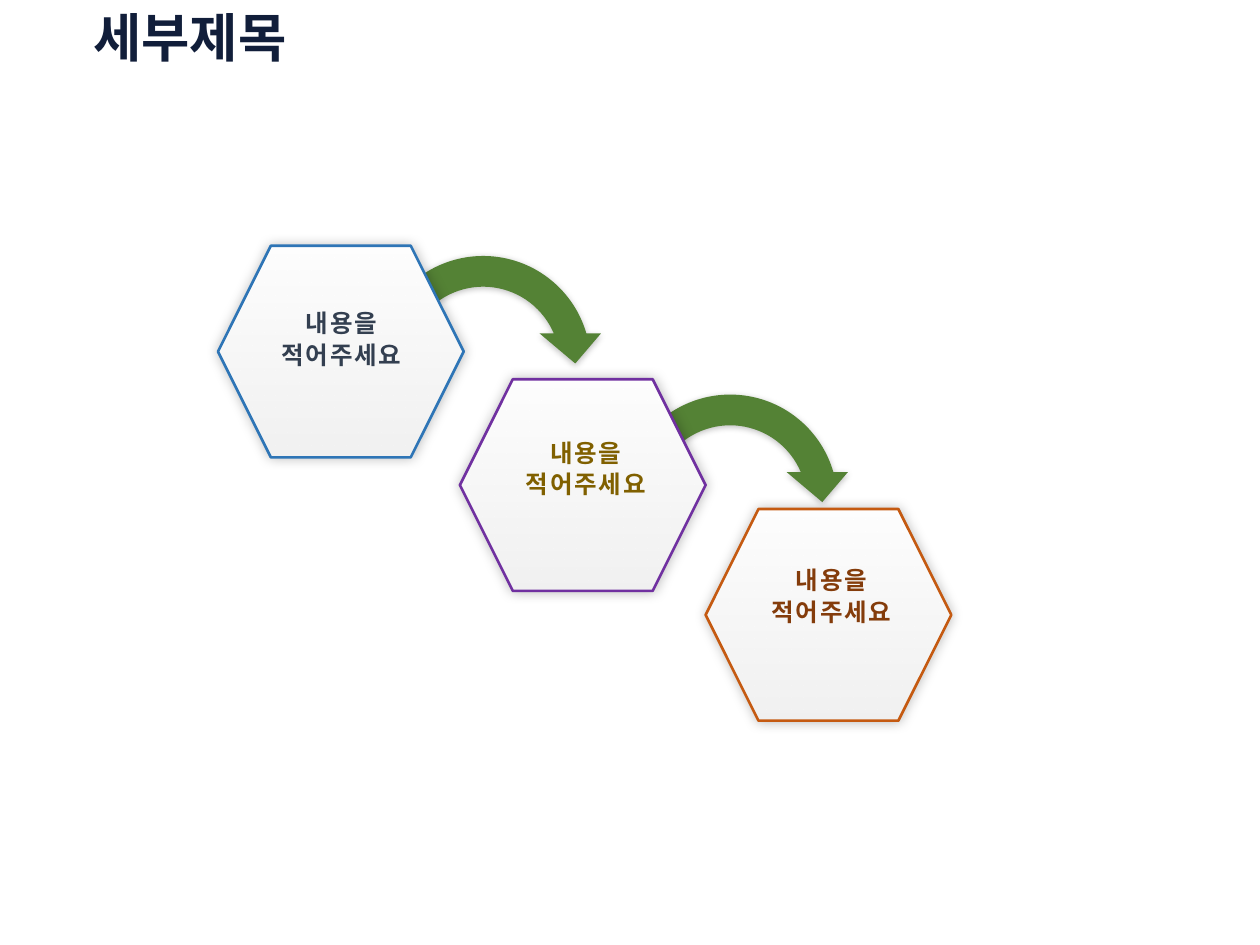
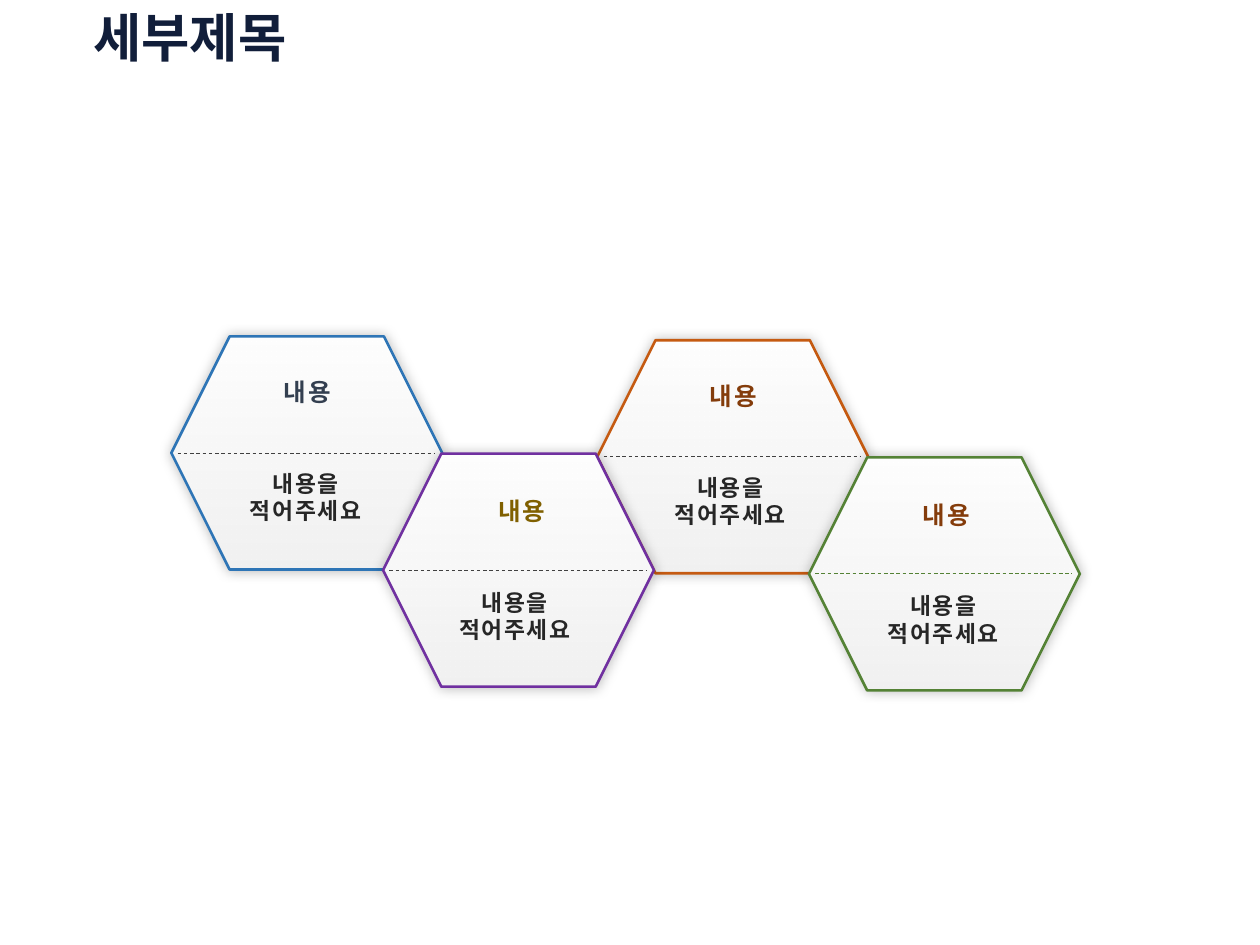
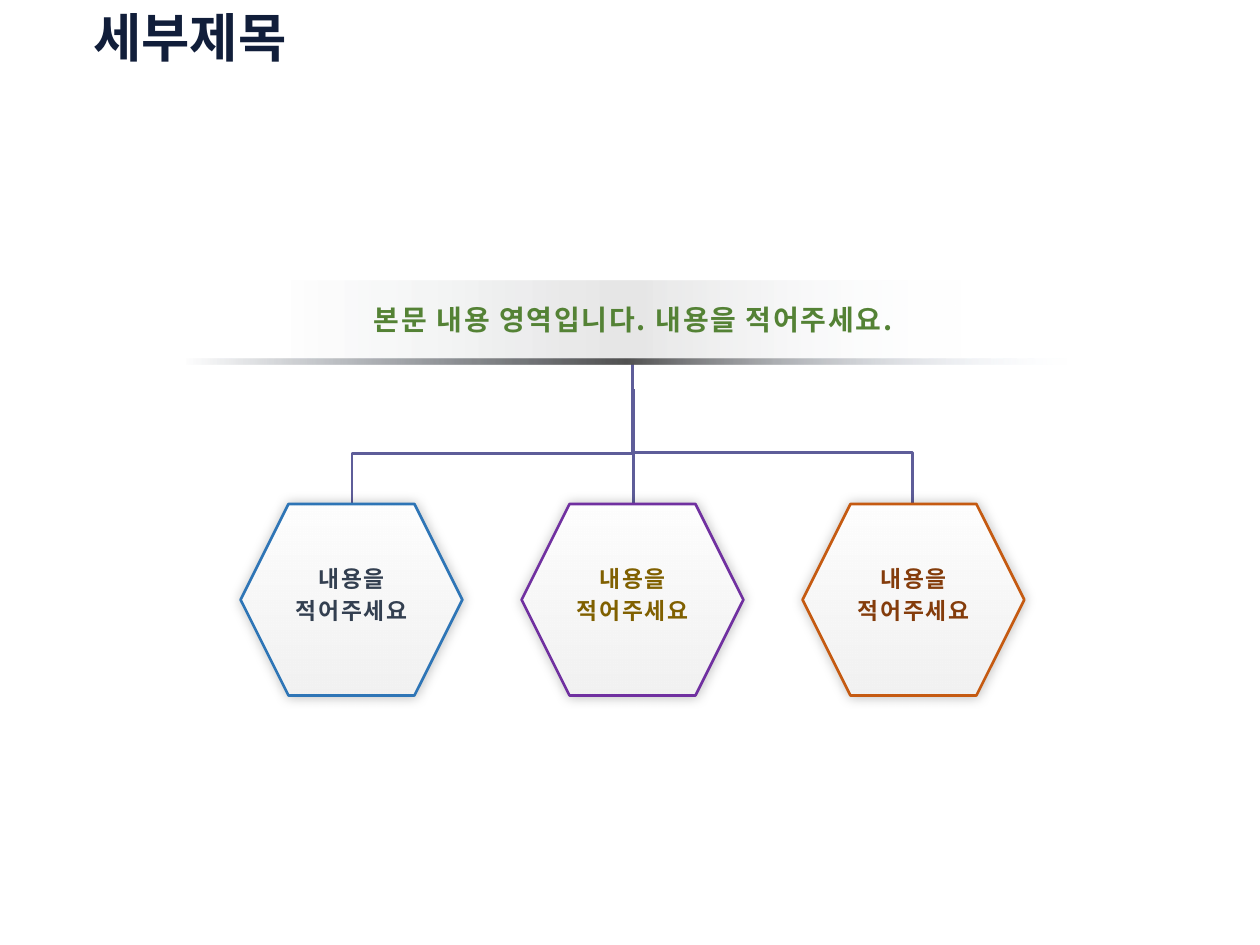
import dataclasses
import typing

import lxml.etree
import pptx
import pptx.dml.color
import pptx.enum.dml
import pptx.enum.shapes
import pptx.enum.text
import pptx.oxml.ns
import pptx.util

WIDE = pptx.util.Inches(10)
HIGH = pptx.util.Inches(7.5)
COL = WIDE / 100
ROW = HIGH / 75

KIND = pptx.enum.shapes.MSO_SHAPE
LINK = pptx.enum.shapes.MSO_CONNECTOR
ALIGN = pptx.enum.text.PP_ALIGN
FONT = "Noto Sans CJK KR"
NAVY, BLUE, GOLD, RUST = "111E3A", "333F50", "806000", "843C0B"
SKY, PLUM, CLAY, LEAF = "2E75B6", "7030A0", "C55A11", "548235"
INK, GREY, STEM = "262626", "404040", "5E5D99"
HEAD = "세부제목"
WORD = ["내용"]
LINES = ["내용을", "적어주세요"]
LEAD = ["본문 내용 영역입니다. 내용을 적어주세요."]


class Box(typing.NamedTuple):
    x: float
    y: float
    w: float
    h: float


class Stop(typing.NamedTuple):
    pos: int
    hue: str
    alpha: int = 100


class Shade(typing.NamedTuple):
    alpha: int
    blur: int
    gap: int
    turn: int


@dataclasses.dataclass
class Cell:
    x: float
    y: float
    edge: str
    hue: str
    tx: float
    ty: float
    bx: float = 0
    by: float = 0
    dash: str = GREY


PEARL = [Stop(0, "FFFFFF"), Stop(100, "F2F2F2"), Stop(100, "E1EBFB", 0)]
GLOW = Shade(25, 7, 0, 0)
DROP = Shade(25, 4, 1, 90)

STEPS = [
    Cell(17.3, 19.5, SKY, BLUE, 18.5, 23.8),
    Cell(36.5, 30.1, PLUM, GOLD, 37.9, 34.1),
    Cell(56, 40.4, CLAY, RUST, 57.4, 44.2),
]
CHAIN = [
    Cell(47.4, 27, CLAY, RUST, 49.6, 29.6, 50.2, 37.1),
    Cell(13.6, 26.7, SKY, BLUE, 15.8, 29.3, 16.5, 36.8),
    Cell(30.4, 36, PLUM, GOLD, 32.8, 38.7, 33.1, 46.2),
    Cell(64.2, 36.3, LEAF, RUST, 66.5, 39, 67.1, 46.5, LEAF),
]
TREE = [
    Cell(19.1 + 22.3 * i, 40, edge, hue, 19.3 + 22.3 * i, 44)
    for i, (edge, hue) in enumerate([(SKY, BLUE), (PLUM, GOLD), (CLAY, RUST)])
]


def tint(code: str) -> pptx.dml.color.RGBColor:
    return pptx.dml.color.RGBColor.from_string(code)


def put(item: typing.Any, **form: typing.Any) -> None:
    for key, value in form.items():
        setattr(item, key, value)


def add(base: typing.Any, tag: str, **form: typing.Any) -> typing.Any:
    node = lxml.etree.SubElement(base, pptx.oxml.ns.qn(tag))
    for key, value in form.items():
        node.set(key, str(value))
    return node


def place(box: Box) -> list[int]:
    return [round(n * unit) for n, unit in zip(box, (COL, ROW, COL, ROW))]


def blend(shape: typing.Any, stops: list[Stop], turn: int) -> None:
    shape.fill.gradient()
    fill = shape._element.spPr.find(pptx.oxml.ns.qn("a:gradFill"))
    fill.find(pptx.oxml.ns.qn("a:lin")).set("ang", str(turn * 60000))
    bag = fill.find(pptx.oxml.ns.qn("a:gsLst"))
    for old in list(bag):
        bag.remove(old)
    for stop in stops:
        node = add(add(bag, "a:gs", pos=stop.pos * 1000), "a:srgbClr", val=stop.hue)
        if stop.alpha < 100:
            add(node, "a:alpha", val=stop.alpha * 1000)


def cast(shape: typing.Any, shade: Shade) -> None:
    base = shape._element.spPr.find(pptx.oxml.ns.qn("a:effectLst"))
    node = add(base, "a:outerShdw", blurRad=shade.blur * 12700, dist=shade.gap * 12700,
               dir=shade.turn * 60000, algn="ctr", rotWithShape=0)
    add(add(node, "a:srgbClr", val="000000"), "a:alpha", val=shade.alpha * 1000)


def form(shapes: typing.Any, kind: typing.Any, box: Box) -> typing.Any:
    shape = shapes.add_shape(kind, *place(box))
    shape.shadow.inherit = False
    shape.line.fill.background()
    return shape


def hexa(shapes: typing.Any, box: Box, edge: str) -> None:
    shape = form(shapes, KIND.HEXAGON, box)
    blend(shape, PEARL, 90)
    shape.line.color.rgb = tint(edge)
    shape.line.width = pptx.util.Pt(1.5)
    cast(shape, GLOW)


def arc(shapes: typing.Any, box: Box) -> None:
    shape = form(shapes, KIND.CIRCULAR_ARROW, box)
    shape.fill.solid()
    shape.fill.fore_color.rgb = tint(LEAF)
    cast(shape, DROP)


def band(shapes: typing.Any, box: Box, stops: list[Stop]) -> None:
    blend(form(shapes, KIND.RECTANGLE, box), stops, 0)


def link(shapes: typing.Any, kind: typing.Any, ends: Box, hue: str, size: float) -> typing.Any:
    wire = shapes.add_connector(kind, *place(ends))
    wire.line.color.rgb = tint(hue)
    wire.line.width = pptx.util.Pt(size)
    add(wire._element.spPr, "a:effectLst")
    return wire


def bend(shapes: typing.Any, ends: Box, turn: int, share: float) -> None:
    wire = link(shapes, LINK.ELBOW, ends, STEM, 1.5)
    prop = wire._element.spPr
    prop.find(pptx.oxml.ns.qn("a:xfrm")).set("rot", str(turn * 60000))
    geom = prop.find(pptx.oxml.ns.qn("a:prstGeom"))
    for old in list(geom):
        geom.remove(old)
    add(add(geom, "a:avLst"), "a:gd", name="adj1", fmla=f"val {round(share * 100000)}")


def text(shapes: typing.Any, box: Box, lines: list[str], hue: str, size: int,
         lead: int = 0) -> None:
    frame = shapes.add_textbox(*place(box)).text_frame
    put(frame, word_wrap=True, auto_size=pptx.enum.text.MSO_AUTO_SIZE.SHAPE_TO_FIT_TEXT)
    for i, line in enumerate(lines):
        para = frame.add_paragraph() if i else frame.paragraphs[0]
        put(para, alignment=ALIGN.CENTER)
        if lead:
            para.line_spacing = pptx.util.Pt(lead)
        run = para.add_run()
        run.text = line
        put(run.font, size=pptx.util.Pt(size), bold=True, name=FONT)
        run.font.color.rgb = tint(hue)
        prop = run._r.get_or_add_rPr()
        prop.set("spc", "100")
        add(prop, "a:ea", typeface=FONT)


def page(deck: typing.Any) -> typing.Any:
    slide = deck.slides.add_slide(deck.slide_layouts[5])
    head = slide.shapes.title
    put(head, **dict(zip(("left", "top", "width", "height"),
                         place(Box(6.4, 0.4, 86.2, 5.7)))))
    frame = head.text_frame
    frame.text = HEAD
    put(frame, vertical_anchor=pptx.enum.text.MSO_ANCHOR.MIDDLE, word_wrap=True,
        auto_size=pptx.enum.text.MSO_AUTO_SIZE.NONE)
    para = frame.paragraphs[0]
    put(para, alignment=ALIGN.LEFT, line_spacing=0.9)
    font = para.runs[0].font
    put(font, size=pptx.util.Pt(30), bold=True, name="Calibri")
    font.color.rgb = tint(NAVY)
    return slide.shapes


def steps(shapes: typing.Any) -> None:
    for x, y in ((48.2, 30.1), (28.6, 19.1)):
        arc(shapes, Box(x, y, 19.5, 19.5))
    for cell in STEPS:
        hexa(shapes, Box(cell.x, cell.y, 19.5, 16.8), cell.edge)
    for cell in STEPS:
        text(shapes, Box(cell.tx, cell.ty, 17.2, 6.1), LINES, cell.hue, 14, 18)


def chain(shapes: typing.Any) -> None:
    for cell in CHAIN:
        group = shapes.add_group_shape().shapes
        hexa(group, Box(cell.x, cell.y, 21.5, 18.5), cell.edge)
        left, mid = cell.x + 0.5, cell.y + 9.25
        wire = link(group, LINK.STRAIGHT, Box(left, mid, left + 20.4, mid), cell.dash, 0.5)
        wire.line.dash_style = pptx.enum.dml.MSO_LINE.DASH
        text(shapes, Box(cell.tx, cell.ty, 17.2, 3.4), WORD, cell.hue, 14, 18)
        text(shapes, Box(cell.bx, cell.by, 15.5, 5.4), LINES, INK, 13)


def tree(shapes: typing.Any) -> None:
    bend(shapes, Box(49.4, 51.8, 73.2, 29.6), 270, 0.7)
    bend(shapes, Box(51, 51.9, 27.2, 29.6), 90, 0.7)
    link(shapes, LINK.STRAIGHT, Box(50.3, 30.9, 50.3, 44.7), STEM, 1.5)
    fade = [Stop(0, BLUE, 0), Stop(50, "000000", 10), Stop(100, "E1EBFB", 0)]
    band(shapes, Box(22.6, 22.3, 54.2, 6.1), fade)
    for cell in TREE:
        hexa(shapes, Box(cell.x, cell.y, 17.6, 15.2), cell.edge)
        text(shapes, Box(cell.tx, cell.ty, 17.2, 6.1), LINES, cell.hue, 13, 18)
    rule = [fade[0], Stop(50, "525252"), fade[-1]]
    band(shapes, Box(14.7, 28.5, 70, 0.4), rule)
    text(shapes, Box(17.9, 23.5, 64.7, 3.7), LEAD, LEAF, 16)


def main() -> None:
    deck = pptx.Presentation()
    put(deck, slide_width=WIDE, slide_height=HIGH)
    for draw in (steps, chain, tree):
        draw(page(deck))
    deck.save("out.pptx")


if __name__ == "__main__":
    main()
